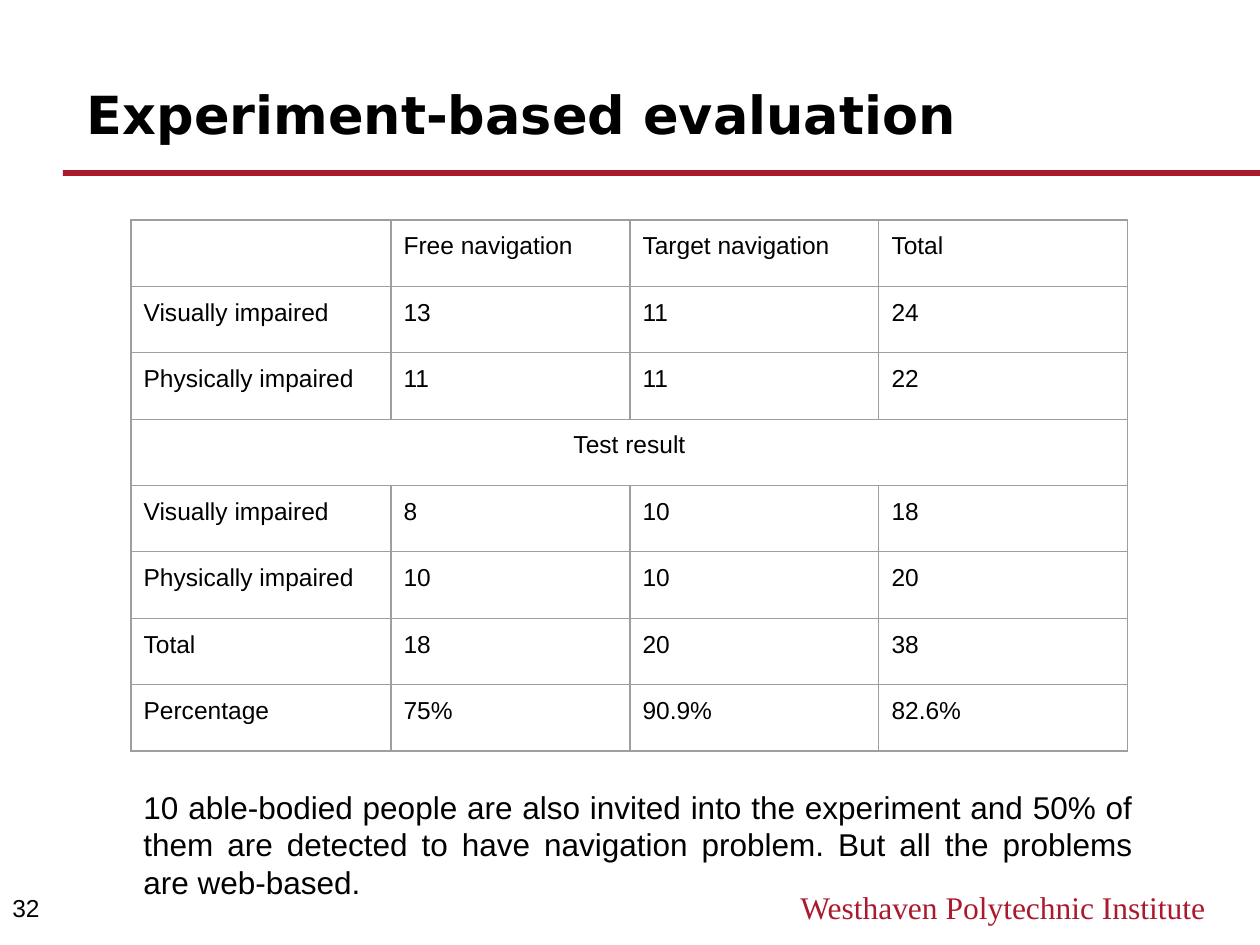
"""Build the experiment-based evaluation slide."""
from dataclasses import dataclass

from lxml import etree
from pptx import Presentation
from pptx import util as u
from pptx.dml.color import RGBColor
from pptx.enum import shapes, text
from pptx.oxml.ns import qn

PX_PER_INCH = 126


@dataclass(frozen=True)
class Theme:
    """Colours, fonts and type sizes."""
    ink: str = "000000"
    accent: str = "AB192D"
    paper: str = "FFFFFF"
    grid: str = "9E9E9E"
    title_font: str = "DejaVu Sans"
    body_font: str = "Arial"
    footer_font: str = "Times New Roman"
    title_size: int = 30
    body_size: int = 18
    small_size: int = 14
    grid_width: float = 0.75


def px(length):
    """Turn pixels into EMU."""
    return u.Emu(round(length * u.Inches(1) / PX_PER_INCH))


def write_text(frame, content, *, font, size, color, bold=False, align=text.PP_ALIGN.LEFT):
    """Write one formatted paragraph and return it."""
    paragraph = frame.paragraphs[0]
    paragraph.alignment = align
    run = paragraph.add_run()
    run.text = content
    run.font.name = font
    run.font.size = u.Pt(size)
    run.font.bold = bold
    run.font.color.rgb = RGBColor.from_string(color)
    return paragraph


class SlideBuilder:
    """Hold the theme and the current slide, and add elements to it."""

    def __init__(self, slide, theme):
        """Keep the slide and its theme."""
        self.slide = slide
        self.theme = theme

    def title(self, content, box):
        """Fill and place the title placeholder."""
        shape = self.slide.shapes.title
        shape.left, shape.top, shape.width, shape.height = map(px, box)
        frame = shape.text_frame
        self.prepare(frame, 0.1, text.MSO_ANCHOR.BOTTOM)
        paragraph = write_text(frame, content, font=self.theme.title_font,
                               size=self.theme.title_size, color=self.theme.ink, bold=True)
        paragraph.line_spacing = 0.95
        paragraph.space_before = u.Pt(12)
        properties = paragraph._p.get_or_add_pPr()
        properties.set("marL", str(u.Inches(0.3)))
        properties.set("indent", str(u.Inches(-0.21)))

    def prepare(self, frame, vertical_inset, anchor):
        """Set wrapping, insets and anchor of a text frame."""
        frame.word_wrap = True
        frame.auto_size = text.MSO_AUTO_SIZE.NONE
        frame.vertical_anchor = anchor
        frame.margin_left = frame.margin_right = u.Inches(0.1)
        frame.margin_top = frame.margin_bottom = u.Inches(vertical_inset)

    def bar(self, box):
        """Add a plain accent bar."""
        shape = self.slide.shapes.add_shape(shapes.MSO_SHAPE.RECTANGLE, *map(px, box))
        shape.shadow.inherit = False
        shape.fill.solid()
        shape.fill.fore_color.rgb = RGBColor.from_string(self.theme.accent)
        shape.line.fill.background()

    def text_box(self, content, box, inset=0.05, anchor=text.MSO_ANCHOR.TOP, **style):
        """Add a wrapped text box."""
        shape = self.slide.shapes.add_textbox(*map(px, box))
        self.prepare(shape.text_frame, inset, anchor)
        write_text(shape.text_frame, content, **style)

    def table(self, rows, box, widths):
        """Add a ruled table, where a row with one entry spans all columns."""
        table = self.slide.shapes.add_table(len(rows), len(widths), *map(px, box)).table
        table.first_row = table.horz_banding = False
        for column, width in zip(table.columns, widths):
            column.width = px(width)
        for index, row in enumerate(rows):
            spanning = len(row) == 1
            if spanning:
                table.cell(index, 0).merge(table.cell(index, len(widths) - 1))
            align = text.PP_ALIGN.CENTER if spanning else text.PP_ALIGN.LEFT
            for number in range(len(widths)):
                self.style_cell(table.cell(index, number))
            for number, content in enumerate(row):
                if content:
                    write_text(table.cell(index, number).text_frame, content,
                               font=self.theme.body_font, size=self.theme.small_size,
                               color=self.theme.ink, align=align)

    def style_cell(self, cell):
        """Set the insets, borders and fill of a cell."""
        cell.margin_left = cell.margin_right = u.Inches(0.1)
        cell.margin_top = cell.margin_bottom = u.Inches(0.1)
        properties = cell._tc.get_or_add_tcPr()
        for side in ("lnL", "lnR", "lnT", "lnB"):
            line = etree.SubElement(properties, qn(f"a:{side}"),
                                    w=str(u.Pt(self.theme.grid_width)))
            fill = etree.SubElement(line, qn("a:solidFill"))
            etree.SubElement(fill, qn("a:srgbClr"), val=self.theme.grid)
        cell.fill.solid()
        cell.fill.fore_color.rgb = RGBColor.from_string(self.theme.paper)


def main():
    """Build and save the presentation."""
    theme = Theme()
    presentation = Presentation()
    presentation.slide_width, presentation.slide_height = px(1260), px(945)
    slide = presentation.slides.add_slide(presentation.slide_layouts[5])
    builder = SlideBuilder(slide, theme)

    builder.bar((63, 170, 1197, 6))
    builder.text_box("Westhaven Polytechnic Institute", (756, 882, 462, 50),
                     font=theme.footer_font, size=theme.body_size, color=theme.accent,
                     align=text.PP_ALIGN.RIGHT)
    builder.title("Experiment-based evaluation", (63, 48, 1134, 111))
    builder.text_box("32", (0, 881, 63, 54), anchor=text.MSO_ANCHOR.MIDDLE,
                     font=theme.body_font, size=theme.small_size, color=theme.ink)
    rows = [
        ("", "Free navigation", "Target navigation", "Total"),
        ("Visually impaired", "13", "11", "24"),
        ("Physically impaired", "11", "11", "22"),
        ("Test result",),
        ("Visually impaired", "8", "10", "18"),
        ("Physically impaired", "10", "10", "20"),
        ("Total", "18", "20", "38"),
        ("Percentage", "75%", "90.9%", "82.6%"),
    ]
    builder.table(rows, (131, 220, 997, 531), (260, 239, 249, 249))
    builder.text_box("10 able-bodied people are also invited into the experiment and 50% of "
                     "them are detected to have navigation problem. But all the problems "
                     "are web-based.", (131, 775, 1014, 134), inset=0.1,
                     font=theme.body_font, size=theme.body_size, color=theme.ink,
                     align=text.PP_ALIGN.JUSTIFY)
    presentation.save("out.pptx")


if __name__ == "__main__":
    main()
